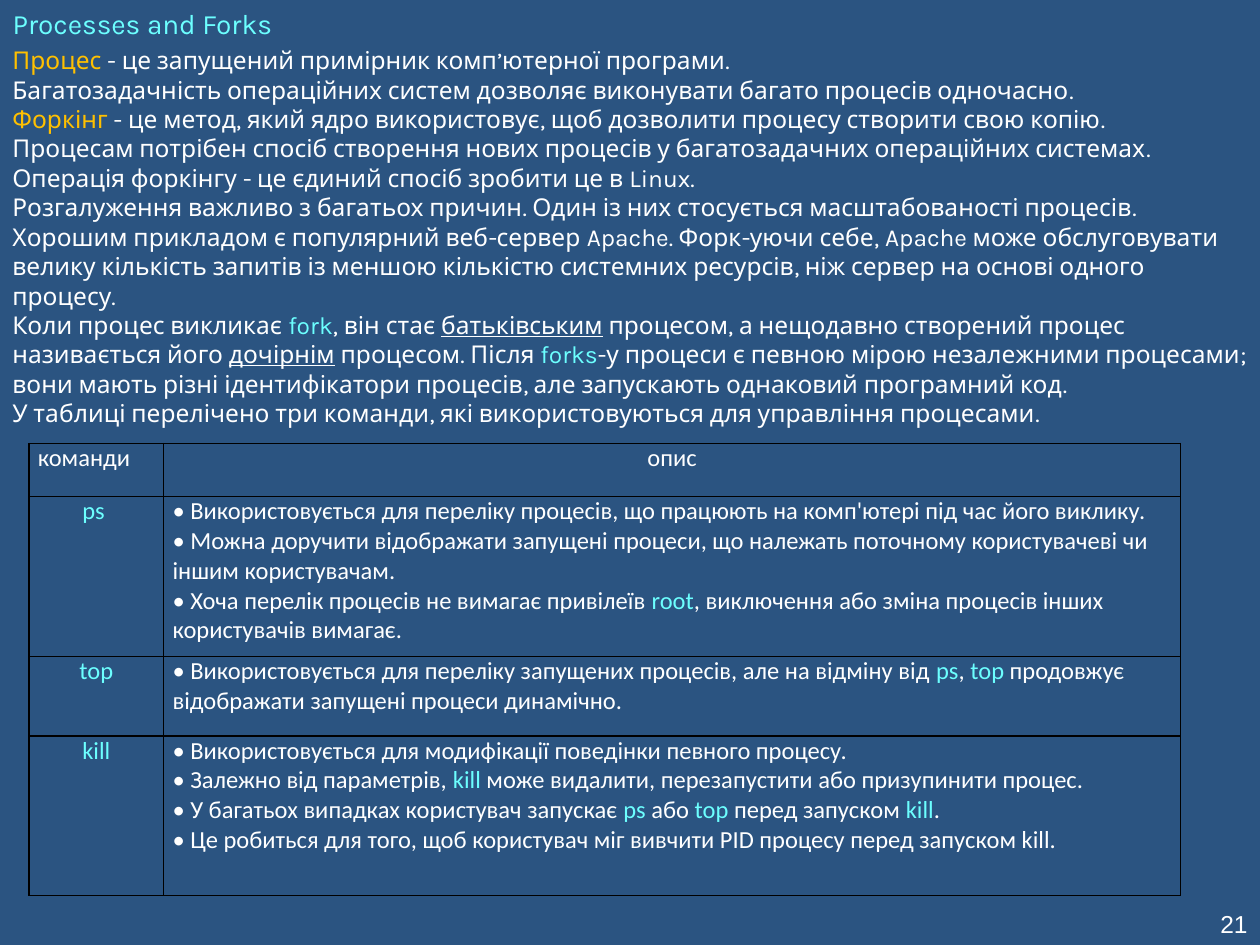
import pptx
import pptx.oxml
import pptx.util
from pptx.dml.color import RGBColor
from pptx.enum.text import MSO_ANCHOR, MSO_AUTO_SIZE, PP_ALIGN
from pptx.oxml.ns import qn
from pptx.util import Inches, Pt

COLORS = {
    "background": "2B5481",
    "text": "FFFFFF",
    "command": "6CFFFF",
    "term": "FFC000",
    "border": "000000",
}

# A paragraph is a list of runs: plain strings, or (text, style) pairs.
DEFINITIONS = [
    [("Процес", "term"), " - це запущений примірник комп’ютерної програми."],
    ["Багатозадачність операційних систем дозволяє виконувати багато процесів одночасно."],
    [("Форкінг", "term"),
     " - це метод, який ядро використовує, щоб дозволити процесу створити свою копію."],
    ["Процесам потрібен спосіб створення нових процесів у багатозадачних операційних системах."],
    ["Операція форкінгу - це єдиний спосіб зробити це в Linux."],
    ["Розгалуження важливо з багатьох причин. Один із них стосується масштабованості процесів."],
    ["Хорошим прикладом є популярний веб-сервер Apache. Форк-уючи себе, Apache може "
     "обслуговувати велику кількість запитів із меншою кількістю системних ресурсів, "
     "ніж сервер на основі одного процесу."],
    ["Коли процес викликає ", ("fork", "command"), ", він стає ",
     ("батьківським", "underline"),
     " процесом, а нещодавно створений процес називається його ",
     ("дочірнім", "underline"), " процесом. Після ", ("forks", "command"),
     "-у процеси є певною мірою незалежними процесами; вони мають різні "
     "ідентифікатори процесів, але запускають однаковий програмний код."],
    ["У таблиці перелічено три команди, які використовуються для управління процесами."],
]

COMMANDS = [
    ("ps ", [
        ["• Використовується для переліку процесів, що працюють на комп'ютері під час його виклику."],
        ["• Можна доручити відображати запущені процеси, що належать поточному "
         "користувачеві чи іншим користувачам."],
        ["• Хоча перелік процесів не вимагає привілеїв ", ("root", "command"),
         ", виключення або зміна процесів інших користувачів вимагає."],
    ]),
    ("top", [
        ["• Використовується для переліку запущених процесів, але на відміну від ",
         ("ps", "command"), ", ", ("top", "command"),
         " продовжує відображати запущені процеси динамічно."],
    ]),
    ("kill", [
        ["• Використовується для модифікації поведінки певного процесу."],
        ["• Залежно від параметрів, ", ("kill ", "command"),
         "може видалити, перезапустити або призупинити процес."],
        ["• У багатьох випадках користувач запускає ", ("ps", "command"), " або ",
         ("top", "command"), " перед запуском ", ("kill", "command"), "."],
        ["• Це робиться для того, щоб користувач міг вивчити PID процесу перед запуском kill."],
    ]),
]


def color(name):
    return RGBColor.from_string(COLORS[name])


def write_text(text_frame, paragraphs, font_name, size, align=PP_ALIGN.LEFT):
    """Fill a text frame with paragraphs of plain or styled runs."""
    for index, runs in enumerate(paragraphs):
        paragraph = text_frame.paragraphs[0] if index == 0 else text_frame.add_paragraph()
        paragraph.alignment = align
        paragraph.font.name = font_name
        paragraph.font.size = Pt(size)
        for item in runs:
            text, style = (item, "text") if isinstance(item, str) else item
            run = paragraph.add_run()
            run.text = text
            run.font.color.rgb = color(style if style in COLORS else "text")
            if style == "underline":
                run.font.underline = True


def place_title(slide, left, top, width, height):
    title = slide.shapes.title
    title.left, title.top, title.width, title.height = left, top, width, height
    frame = title.text_frame
    frame.vertical_anchor = MSO_ANCHOR.TOP
    frame.auto_size = MSO_AUTO_SIZE.NONE
    write_text(frame, [[("Processes and Forks", "command")]], "Karla", 16)


def add_text(slide, left, top, width, height, paragraphs, font_name,
             align=PP_ALIGN.LEFT, anchor=MSO_ANCHOR.TOP):
    frame = slide.shapes.add_textbox(left, top, width, height).text_frame
    frame.word_wrap = True
    frame.vertical_anchor = anchor
    write_text(frame, paragraphs, font_name, 14, align)


def add_borders(cell):
    properties = cell._tc.get_or_add_tcPr()
    for side in ("lnL", "lnR", "lnT", "lnB"):
        line = pptx.oxml.ns.qn("a:" + side)
        border = properties.makeelement(line, {"w": str(Pt(1))})
        fill = border.makeelement(qn("a:solidFill"), {})
        fill.append(fill.makeelement(qn("a:srgbClr"), {"val": COLORS["border"]}))
        border.append(fill)
        properties.append(border)


def fill_cell(cell, paragraphs, align):
    add_borders(cell)
    cell.fill.background()
    cell.margin_left = cell.margin_right = Inches(0.07)
    cell.margin_top = cell.margin_bottom = 0
    write_text(cell.text_frame, paragraphs, "Calibri", 14, align)


def add_command_table(slide, left, top, width):
    row_heights = [0.42, 1.27, 0.63, 1.27]
    height = Inches(sum(row_heights))
    table = slide.shapes.add_table(len(row_heights), 2, left, top, width, height).table
    table.first_row = table.horz_banding = False
    table.columns[0].width = Inches(1.07)
    table.columns[1].width = width - Inches(1.07)
    for row, row_height in zip(table.rows, row_heights):
        row.height = Inches(row_height)

    fill_cell(table.cell(0, 0), [["команди"]], PP_ALIGN.LEFT)
    fill_cell(table.cell(0, 1), [["опис"]], PP_ALIGN.CENTER)
    for row_index, (command, description) in enumerate(COMMANDS, start=1):
        fill_cell(table.cell(row_index, 0), [[(command, "command")]], PP_ALIGN.CENTER)
        fill_cell(table.cell(row_index, 1), description, PP_ALIGN.LEFT)


def main():
    presentation = pptx.Presentation()
    presentation.slide_width = Inches(10)
    presentation.slide_height = Inches(7.5)
    slide = presentation.slides.add_slide(presentation.slide_layouts[5])
    slide.background.fill.solid()
    slide.background.fill.fore_color.rgb = color("background")

    place_title(slide, 0, 0, Inches(4.61), Inches(0.37))
    add_text(slide, 0, Inches(0.31), Inches(10), Inches(2.93), DEFINITIONS, "Karla")
    add_command_table(slide, Inches(0.23), Inches(3.52), Inches(9.14))
    add_text(slide, Inches(9.56), Inches(7.1), Inches(0.44), Inches(0.4), [["21"]],
             "Arial", PP_ALIGN.RIGHT, MSO_ANCHOR.BOTTOM)
    presentation.save("out.pptx")


if __name__ == "__main__":
    main()
